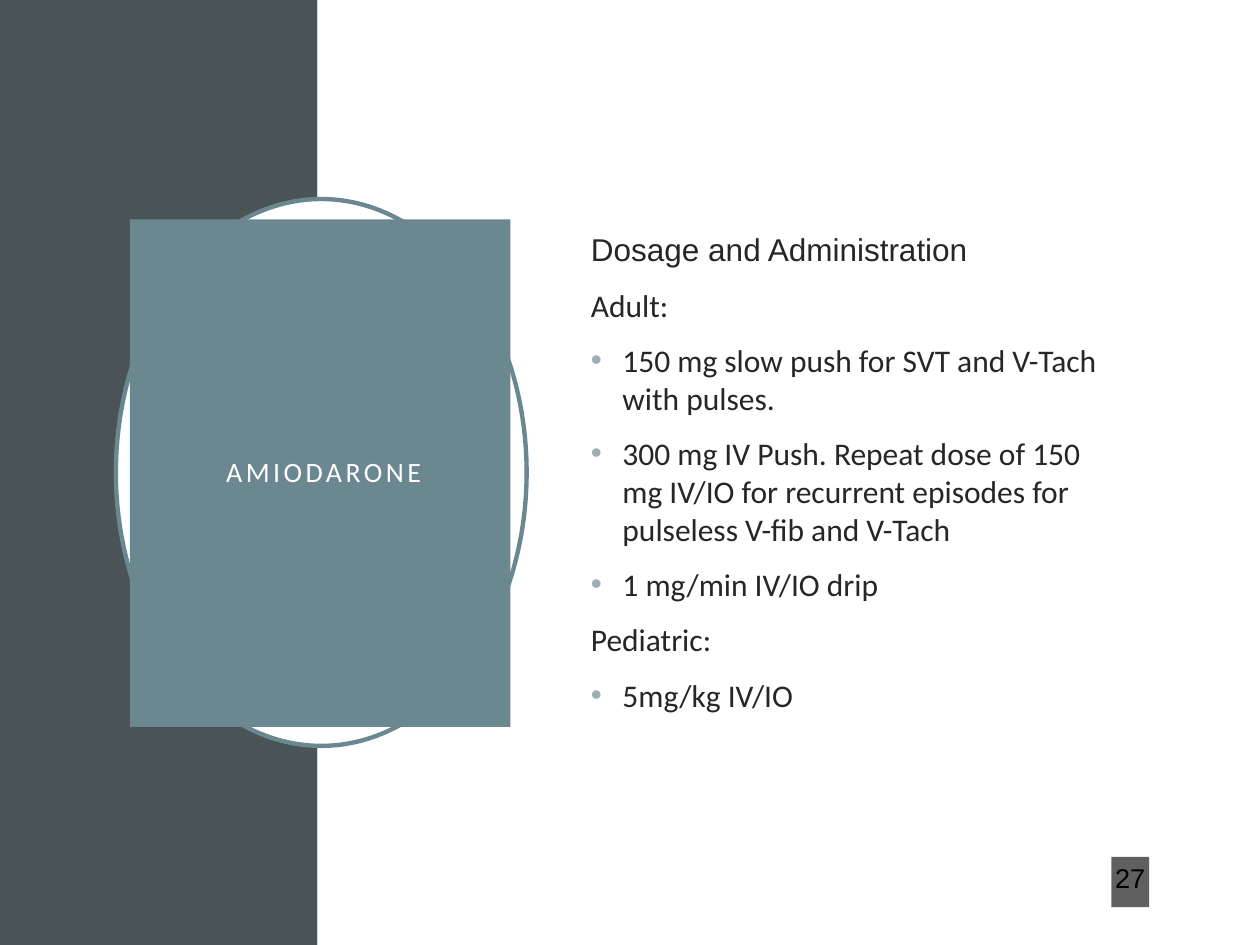
from lxml import etree
from pptx import Presentation
from pptx.dml.color import RGBColor
from pptx.enum.shapes import MSO_SHAPE
from pptx.enum.text import MSO_ANCHOR, MSO_AUTO_SIZE, PP_ALIGN
from pptx.oxml.ns import qn
from pptx.util import Inches, Pt

RECTANGLE, OVAL = MSO_SHAPE.RECTANGLE, MSO_SHAPE.OVAL
MIDDLE, NO_AUTOFIT = MSO_ANCHOR.MIDDLE, MSO_AUTO_SIZE.NONE
LEFT, CENTER = PP_ALIGN.LEFT, PP_ALIGN.CENTER

SLATE = RGBColor(0x4A, 0x53, 0x56)
TEAL = RGBColor(0x6B, 0x88, 0x91)
PALE_TEAL = RGBColor(0x9B, 0xAF, 0xB5)
CHARCOAL = RGBColor(0x26, 0x26, 0x26)
NEAR_BLACK = RGBColor(0x1D, 0x1D, 0x1D)
BLACK = RGBColor(0, 0, 0)
WHITE = RGBColor(0xFF, 0xFF, 0xFF)

# Content: (text, is a bullet, font)
TITLE = "AMIODARONE"
DOSAGE = [
    ("Dosage and Administration", False, "Arial"),
    ("Adult:", False, "Calibri"),
    ("150 mg slow push for SVT and V-Tach with pulses.", True, "Calibri"),
    ("300 mg IV Push. Repeat dose of 150 mg IV/IO for recurrent episodes "
     "for pulseless V-fib and V-Tach", True, "Calibri"),
    ("1 mg/min IV/IO drip", True, "Calibri"),
    ("Pediatric:", False, "Calibri"),
    ("5mg/kg IV/IO", True, "Calibri"),
]
PAGE_NUMBER = "27"

# Layout in inches: left, top, width, height
WIDTH, HEIGHT = 10, 7.5
BAND_WIDTH = 2.52
RING_BOX = (0.92, 1.58, 3.26, 4.34)
TITLE_BOX = (1.03, 1.74, 3.02, 4.03)
BODY_BOX = (4.59, 1.53, 4.36, 4.43)
NUMBER_BOX = (8.82, 6.8, 0.3, 0.4)
BULLET_INDENT = 0.25


def place(shape, box):
    shape.left, shape.top, shape.width, shape.height = map(Inches, box)


def add_panel(slide, kind, box, fill, line=None):
    shape = slide.shapes.add_shape(kind, *map(Inches, box))
    shape.shadow.inherit = False
    shape.fill.solid()
    shape.fill.fore_color.rgb = fill
    if line is None:
        shape.line.fill.background()
    else:
        shape.line.color.rgb = line
        shape.line.width = Pt(2.5)
    return shape


def set_frame(shape, insets):
    frame = shape.text_frame
    frame.word_wrap = True
    frame.auto_size = NO_AUTOFIT
    frame.vertical_anchor = MIDDLE
    (frame.margin_left, frame.margin_top,
     frame.margin_right, frame.margin_bottom) = map(Inches, insets)
    return frame


def set_bullet(paragraph, bullet):
    properties = paragraph._p.get_or_add_pPr()
    indent = Inches(BULLET_INDENT) if bullet else 0
    properties.set("marL", str(indent))
    properties.set("indent", str(-indent))
    if not bullet:
        etree.SubElement(properties, qn("a:buNone"))
        return
    color = etree.SubElement(properties, qn("a:buClr"))
    etree.SubElement(color, qn("a:srgbClr"), val=str(PALE_TEAL))
    etree.SubElement(properties, qn("a:buFont"), typeface="Arial")
    etree.SubElement(properties, qn("a:buChar"), char="•")


def write(paragraph, text, *, font, size, color, align=LEFT, line_spacing=1.0,
          before=0, after=0, tracking=0):
    paragraph.alignment = align
    paragraph.line_spacing = line_spacing
    paragraph.space_before, paragraph.space_after = Pt(before), Pt(after)
    run = paragraph.add_run()
    run.text = text
    run.font.name, run.font.size = font, Pt(size)
    run.font.color.rgb = color
    if tracking:
        run.font._element.set("spc", str(tracking * 100))


def main():
    presentation = Presentation()
    presentation.slide_width, presentation.slide_height = Inches(WIDTH), Inches(HEIGHT)
    slide = presentation.slides.add_slide(presentation.slide_layouts[1])
    title, body = slide.placeholders

    # Background panels and ring, moved behind the placeholders
    panels = [
        add_panel(slide, RECTANGLE, (0, 0, BAND_WIDTH, HEIGHT), SLATE),
        add_panel(slide, RECTANGLE, (BAND_WIDTH, 0, WIDTH - BAND_WIDTH, HEIGHT), WHITE),
        add_panel(slide, OVAL, RING_BOX, WHITE, line=TEAL),
    ]
    for panel in panels:
        title._element.addprevious(panel._element)

    # Title block
    place(title, TITLE_BOX)
    title.fill.solid()
    title.fill.fore_color.rgb = TEAL
    frame = set_frame(title, (0.2, 0.2, 0.14, 0.2))
    write(frame.paragraphs[0], TITLE, font="Calibri", size=16, color=WHITE,
          align=CENTER, line_spacing=0.9, tracking=2)

    # Dosage list
    place(body, BODY_BOX)
    frame = set_frame(body, (0.1, 0.05, 0.14, 0.05))
    for index, (text, bullet, font) in enumerate(DOSAGE):
        paragraph = frame.add_paragraph() if index else frame.paragraphs[0]
        set_bullet(paragraph, bullet)
        write(paragraph, text, font=font, size=18, color=CHARCOAL,
              before=10 if index else 0)

    # Page number on a 70 % opaque tile
    tile = add_panel(slide, RECTANGLE, NUMBER_BOX, NEAR_BLACK)
    fill_color = tile._element.spPr.find(qn("a:solidFill"))[0]
    etree.SubElement(fill_color, qn("a:alpha"), val="70000")
    frame = set_frame(tile, (0.02, 0.05, 0.02, 0.05))
    write(frame.paragraphs[0], PAGE_NUMBER, font="Arial", size=15.5, color=BLACK,
          align=CENTER, line_spacing=0.7, after=6)

    presentation.save("out.pptx")


if __name__ == "__main__":
    main()
